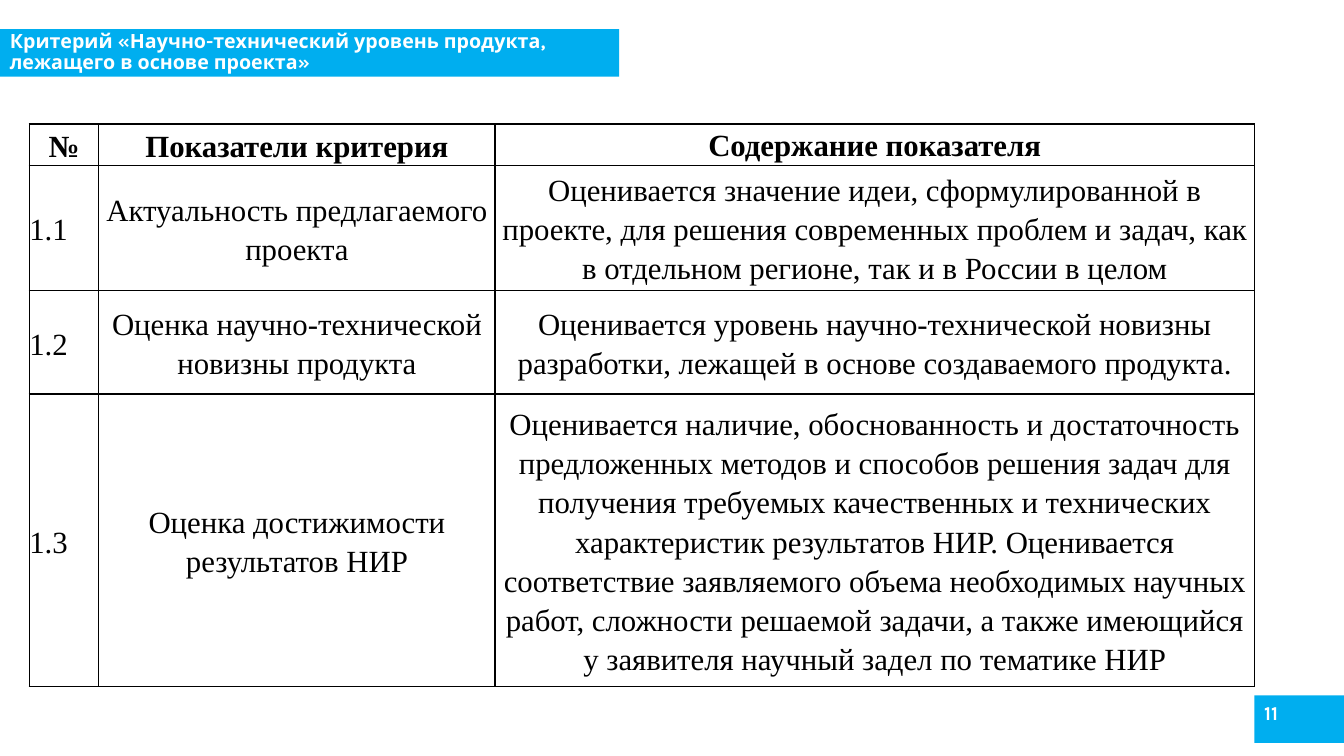
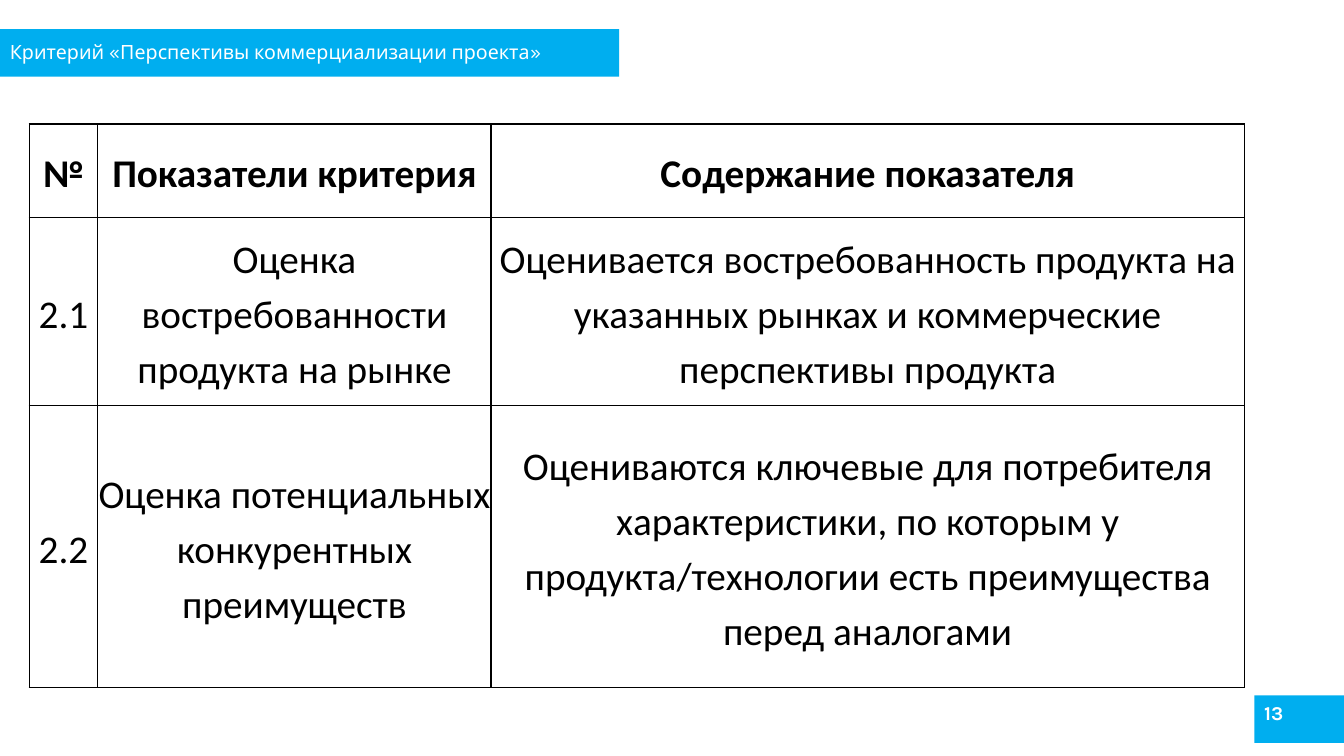
from dataclasses import dataclass

from lxml.etree import SubElement
from pptx import Presentation
from pptx.dml.color import RGBColor
from pptx.enum.shapes import MSO_SHAPE
from pptx.enum.text import MSO_ANCHOR, PP_ALIGN
from pptx.oxml.ns import qn
from pptx.util import Pt

EMU_PER_PX = 9144
BLUE = RGBColor(0x00, 0xAE, 0xEF)
WHITE = RGBColor(0xFF, 0xFF, 0xFF)
BLACK = RGBColor(0x00, 0x00, 0x00)
BAND_FONT = "Karla"
BAND_SIZE = 14
BORDER_WIDTH = Pt(1)
TABLE_LEFT, TABLE_TOP = 29, 123
HEADINGS = ("№", "Показатели критерия", "Содержание показателя")


@dataclass(frozen=True)
class Band:
    left: int
    top: int
    width: int
    height: int
    anchor: MSO_ANCHOR
    vertical_inset: int
    line_spacing: float


@dataclass(frozen=True)
class Indicator:
    number: str
    name: str
    content: str


@dataclass(frozen=True)
class CriterionSlide:
    title: str
    title_bold: bool
    page: str
    font: str
    size: int
    number_align: PP_ALIGN
    last_heading_anchor: MSO_ANCHOR
    column_widths: tuple[int, ...]
    row_heights: tuple[int, ...]
    indicators: tuple[Indicator, ...]


TITLE_BAND = Band(0, 29, 614, 47, MSO_ANCHOR.MIDDLE, 0, 0.9)
PAGE_BAND = Band(1244, 690, 89, 47, MSO_ANCHOR.TOP, 5, 1.0)

CRITERIA = (
    CriterionSlide(
        title="Критерий «Научно-технический уровень продукта, лежащего в основе проекта»",
        title_bold=True,
        page="11",
        font="Times New Roman",
        size=22,
        number_align=PP_ALIGN.LEFT,
        last_heading_anchor=MSO_ANCHOR.TOP,
        column_widths=(69, 393, 753),
        row_heights=(41, 124, 103, 290),
        indicators=(
            Indicator(
                "1.1",
                "Актуальность предлагаемого проекта",
                "Оценивается значение идеи, сформулированной в проекте, для решения "
                "современных проблем и задач, как в отдельном регионе, так и в России в целом",
            ),
            Indicator(
                "1.2",
                "Оценка научно-технической новизны продукта",
                "Оценивается уровень научно-технической новизны разработки, "
                "лежащей в основе создаваемого продукта.",
            ),
            Indicator(
                "1.3",
                "Оценка достижимости результатов НИР",
                "Оценивается наличие, обоснованность и достаточность предложенных методов "
                "и способов решения задач для получения требуемых качественных и технических "
                "характеристик результатов НИР. Оценивается соответствие заявляемого объема "
                "необходимых научных работ, сложности решаемой задачи, а также имеющийся "
                "у заявителя научный задел по тематике НИР",
            ),
        ),
    ),
    CriterionSlide(
        title="Критерий «Перспективы коммерциализации проекта»",
        title_bold=False,
        page="13",
        font="Calibri",
        size=28,
        number_align=PP_ALIGN.CENTER,
        last_heading_anchor=MSO_ANCHOR.MIDDLE,
        column_widths=(68, 390, 747),
        row_heights=(93, 186, 280),
        indicators=(
            Indicator(
                "2.1",
                "Оценка востребованности продукта на рынке",
                "Оценивается востребованность продукта на указанных рынках "
                "и коммерческие перспективы продукта",
            ),
            Indicator(
                "2.2",
                "Оценка потенциальных конкурентных преимуществ",
                "Оцениваются ключевые для потребителя характеристики, по которым "
                "у продукта/технологии есть преимущества перед аналогами",
            ),
        ),
    ),
)


def px(length: int) -> int:
    return length * EMU_PER_PX


def write_text(
    text_frame,
    text: str,
    *,
    font: str,
    size: int,
    color: RGBColor,
    bold: bool = False,
    align: PP_ALIGN = PP_ALIGN.LEFT,
    line_spacing: float = 1.0,
) -> None:
    paragraph = text_frame.paragraphs[0]
    paragraph.alignment = align
    paragraph.line_spacing = line_spacing
    run = paragraph.add_run()
    run.text = text
    run.font.name = font
    run.font.size = Pt(size)
    run.font.bold = bold
    run.font.color.rgb = color


def draw_band(slide, band: Band, text: str, bold: bool) -> None:
    shape = slide.shapes.add_shape(
        MSO_SHAPE.RECTANGLE, px(band.left), px(band.top), px(band.width), px(band.height)
    )
    shape.shadow.inherit = False
    shape.fill.solid()
    shape.fill.fore_color.rgb = BLUE
    shape.line.fill.background()
    text_frame = shape.text_frame
    text_frame.word_wrap = True
    text_frame.vertical_anchor = band.anchor
    text_frame.margin_left = text_frame.margin_right = px(10)
    text_frame.margin_top = text_frame.margin_bottom = px(band.vertical_inset)
    write_text(
        text_frame,
        text,
        font=BAND_FONT,
        size=BAND_SIZE,
        color=WHITE,
        bold=bold,
        line_spacing=band.line_spacing,
    )


def format_cell(cell, anchor: MSO_ANCHOR) -> None:
    cell.margin_left = cell.margin_right = cell.margin_top = cell.margin_bottom = 0
    cell.vertical_anchor = anchor
    properties = cell._tc.get_or_add_tcPr()
    for side in ("a:lnL", "a:lnR", "a:lnT", "a:lnB"):
        line = SubElement(properties, qn(side), w=str(BORDER_WIDTH))
        fill = SubElement(line, qn("a:solidFill"))
        SubElement(fill, qn("a:srgbClr"), val=str(BLACK))
    cell.fill.background()


def draw_table(slide, criterion: CriterionSlide) -> None:
    rows = [HEADINGS] + [(item.number, item.name, item.content) for item in criterion.indicators]
    table = slide.shapes.add_table(
        len(rows),
        len(HEADINGS),
        px(TABLE_LEFT),
        px(TABLE_TOP),
        px(sum(criterion.column_widths)),
        px(sum(criterion.row_heights)),
    ).table
    table.first_row = table.horz_banding = False
    for column, width in zip(table.columns, criterion.column_widths):
        column.width = px(width)
    for row, height in zip(table.rows, criterion.row_heights):
        row.height = px(height)
    for row_index, texts in enumerate(rows):
        is_heading = row_index == 0
        for column_index, text in enumerate(texts):
            cell = table.cell(row_index, column_index)
            is_last_heading = is_heading and column_index == len(HEADINGS) - 1
            is_number = column_index == 0 and not is_heading
            format_cell(
                cell, criterion.last_heading_anchor if is_last_heading else MSO_ANCHOR.MIDDLE
            )
            write_text(
                cell.text_frame,
                text,
                font=criterion.font,
                size=criterion.size,
                color=BLACK,
                bold=is_heading,
                align=criterion.number_align if is_number else PP_ALIGN.CENTER,
                line_spacing=1.15,
            )


def main() -> None:
    presentation = Presentation()
    presentation.slide_width = px(1333)
    presentation.slide_height = px(750)
    blank_layout = presentation.slide_layouts[6]
    for criterion in CRITERIA:
        slide = presentation.slides.add_slide(blank_layout)
        draw_band(slide, TITLE_BAND, criterion.title, criterion.title_bold)
        draw_band(slide, PAGE_BAND, criterion.page, True)
        draw_table(slide, criterion)
    presentation.save("out.pptx")


if __name__ == "__main__":
    main()
